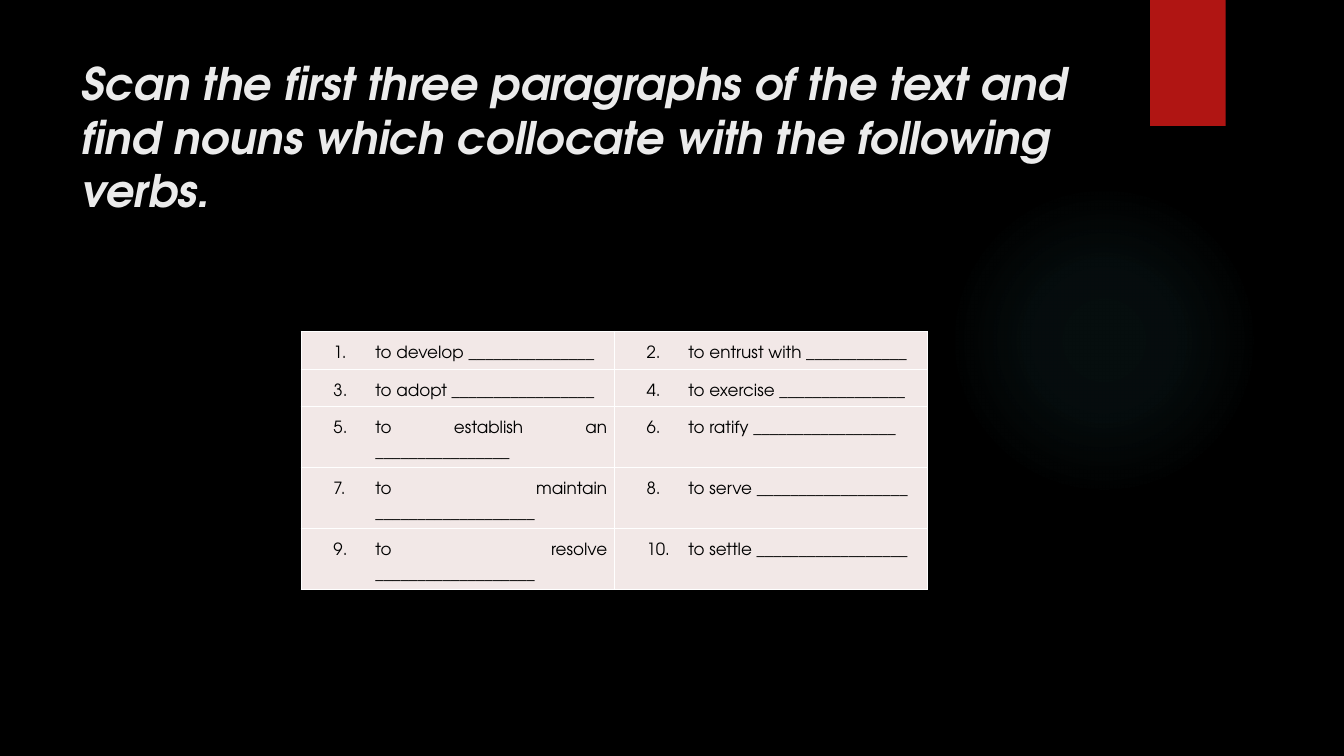
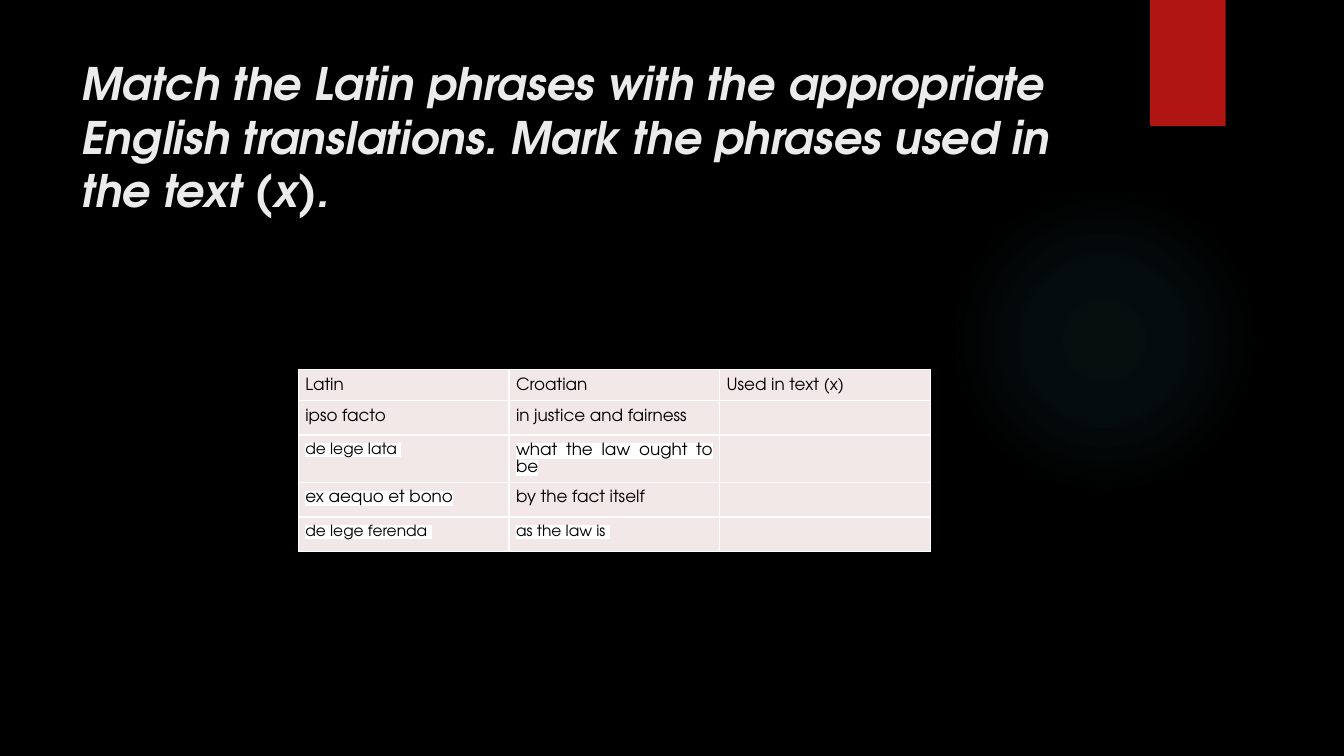
from lxml.etree import SubElement
from pptx import Presentation
from pptx.dml.color import RGBColor
from pptx.enum.shapes import MSO_SHAPE
from pptx.enum.text import MSO_ANCHOR, MSO_AUTO_SIZE, PP_ALIGN
from pptx.oxml import parse_xml
from pptx.oxml.ns import nsdecls, qn
from pptx.util import Pt

FONT = "TeX Gyre Adventor"
BACKGROUND, GLOW, BAND = "000000", "50B9C1", "B01513"
TITLE_COLOR, TEXT_COLOR, CELL_COLOR, WHITE = "EBEBEB", "000000", "F2E8E7", "FFFFFF"
GLOW_STOPS = ((0, 7), (36, 6), (69, 0))
CELL_INSET = 5

VERBS = (
    ("to develop _______________", "to entrust with ____________"),
    ("to adopt _________________", "to exercise _______________"),
    ("to establish an ________________", "to ratify _________________"),
    ("to maintain ___________________", "to serve __________________"),
    ("to resolve ___________________", "to settle __________________"),
)
PHRASES = (
    ("Latin", "Croatian", "Used in text (x)"),
    ("ipso facto", "in justice and fairness", ""),
    ("de lege lata ", "what the law ought to be", ""),
    ("ex aequo et bono", "by the fact itself", ""),
    ("de lege ferenda ", "as the law is ", ""),
)
SMALL_PHRASES = {"de lege lata ", "de lege ferenda ", "as the law is "}
HIGHLIGHTED_PHRASES = SMALL_PHRASES | {"what the law ought to be", "ex aequo et bono"}


def rgb(value):
    return RGBColor.from_string(value)


def write_text(paragraph, text, size=12, color=TEXT_COLOR, bold=False, italic=False,
               align=PP_ALIGN.LEFT, line_spacing=None, space_after=0, highlight=None):
    paragraph.alignment = align
    paragraph.line_spacing = line_spacing
    paragraph.space_after = Pt(space_after)
    if not text:
        SubElement(paragraph._p, qn("a:endParaRPr"), sz=str(size * 100))
        return
    run = paragraph.add_run()
    run.text = text
    font = run.font
    font.size, font.bold, font.italic = Pt(size), bold, italic
    font.color.rgb = rgb(color)
    if highlight:
        mark = SubElement(run._r.get_or_add_rPr(), qn("a:highlight"))
        SubElement(mark, qn("a:srgbClr"), val=highlight)
    font.name = FONT


def number_paragraph(paragraph, number):
    """Turn a paragraph into a hanging item of a numbered list."""
    properties = paragraph._p.get_or_add_pPr()
    properties.set("marL", str(Pt(48)))
    properties.set("indent", str(Pt(-30)))
    SubElement(properties, qn("a:buAutoNum"), type="arabicPeriod", startAt=str(number))


def add_plain_shape(slide, kind, left, top, width, height, color):
    shape = slide.shapes.add_shape(kind, Pt(left), Pt(top), Pt(width), Pt(height))
    shape.shadow.inherit = False
    shape.fill.solid()
    shape.fill.fore_color.rgb = rgb(color)
    shape.line.fill.background()
    return shape


def fade_fill(shape, color, stops):
    """Replace a solid fill by a radial one; stops are (position, opacity) in percent."""
    stop_list = "".join(
        f'<a:gs pos="{position * 1000}"><a:srgbClr val="{color}">'
        f'<a:alpha val="{opacity * 1000}"/></a:srgbClr></a:gs>'
        for position, opacity in stops)
    gradient = parse_xml(
        f'<a:gradFill {nsdecls("a")} rotWithShape="1"><a:gsLst>{stop_list}</a:gsLst>'
        '<a:path path="circle"><a:fillToRect l="50000" t="50000" r="50000" b="50000"/>'
        '</a:path></a:gradFill>')
    properties = shape.element.spPr
    properties.replace(properties.find(qn("a:solidFill")), gradient)


def add_shadow(shape):
    effects = shape.element.spPr.find(qn("a:effectLst"))
    shadow = SubElement(effects, qn("a:outerShdw"), blurRad=str(Pt(3)), dist=str(Pt(2)),
                        dir="5400000", rotWithShape="0")
    color = SubElement(shadow, qn("a:srgbClr"), val="000000")
    SubElement(color, qn("a:alpha"), val="45000")


def decorate_master(presentation, slide):
    """Build the glow and the band on a slide, then move them to the master."""
    master = presentation.slide_master
    master.background.fill.solid()
    master.background.fill.fore_color.rgb = rgb(BACKGROUND)
    glow = add_plain_shape(slide, MSO_SHAPE.OVAL, 677.5, 131.8, 221.8, 221.8, GLOW)
    fade_fill(glow, GLOW, GLOW_STOPS)
    band = add_plain_shape(slide, MSO_SHAPE.RECTANGLE, 821.5, 0, 54, 90, BAND)
    add_shadow(band)
    for offset, shape in enumerate((glow, band)):
        shape.element.nvSpPr.cNvPr.set("id", str(101 + offset))
        master.shapes.element.insert(2 + offset, shape.element)


def place_title(layout):
    title = next(iter(layout.placeholders))
    title.left, title.top, title.width, title.height = Pt(51.1), Pt(36), Pt(741), Pt(110)


def set_title(slide, text):
    frame = slide.shapes.title.text_frame
    frame.word_wrap = True
    frame.auto_size = MSO_AUTO_SIZE.NONE
    frame.vertical_anchor = MSO_ANCHOR.TOP
    write_text(frame.paragraphs[0], text, size=32, color=TITLE_COLOR, bold=True, italic=True)


def format_cell(cell):
    properties = cell._tc.get_or_add_tcPr()
    for side in ("lnL", "lnR", "lnT", "lnB"):
        border = SubElement(properties, qn(f"a:{side}"), w=str(Pt(1)))
        fill = SubElement(border, qn("a:solidFill"))
        SubElement(fill, qn("a:srgbClr"), val=WHITE)
    cell.fill.solid()
    cell.fill.fore_color.rgb = rgb(CELL_COLOR)
    cell.margin_left = cell.margin_right = Pt(CELL_INSET)
    cell.margin_top = cell.margin_bottom = Pt(CELL_INSET)


def add_grid(slide, left, top, column_width, row_heights, column_count):
    frame = slide.shapes.add_table(len(row_heights), column_count, Pt(left), Pt(top),
                                   Pt(column_width * column_count), Pt(sum(row_heights)))
    table = frame.table
    table.first_row = table.horz_banding = False
    for column in table.columns:
        column.width = Pt(column_width)
    for row, height in zip(table.rows, row_heights):
        row.height = Pt(height)
    for cell in table.iter_cells():
        format_cell(cell)
    return table


def fill_verbs(table):
    verbs = (verb for row in VERBS for verb in row)
    for number, (cell, verb) in enumerate(zip(table.iter_cells(), verbs), start=1):
        paragraph = cell.text_frame.paragraphs[0]
        number_paragraph(paragraph, number)
        write_text(paragraph, verb, align=PP_ALIGN.JUSTIFY, line_spacing=1.5, space_after=8)


def fill_phrases(table):
    phrases = (phrase for row in PHRASES for phrase in row)
    for cell, phrase in zip(table.iter_cells(), phrases):
        write_text(cell.text_frame.paragraphs[0], phrase,
                   size=11 if phrase in SMALL_PHRASES else 12,
                   highlight=WHITE if phrase in HIGHLIGHTED_PHRASES else None,
                   align=PP_ALIGN.JUSTIFY, line_spacing=1.07, space_after=8)


def main():
    presentation = Presentation()
    presentation.slide_width, presentation.slide_height = Pt(960), Pt(540)
    layout = presentation.slide_layouts.get_by_name("Title Only")
    place_title(layout)

    verb_slide = presentation.slides.add_slide(layout)
    decorate_master(presentation, verb_slide)
    set_title(verb_slide, "Scan the first three paragraphs of the text and find nouns "
                          "which collocate with the following verbs.")
    fill_verbs(add_grid(verb_slide, 215.2, 236.7, 223.6, (27, 26.5, 43.6, 43.6, 43.6), 2))

    phrase_slide = presentation.slides.add_slide(layout)
    set_title(phrase_slide, "Match the Latin phrases with the appropriate English "
                            "translations. Mark the phrases used in the text (x).")
    fill_phrases(add_grid(phrase_slide, 213.1, 264.2, 150.5, (21.8, 21.8, 33.8, 21.8, 21.8), 3))

    presentation.save("out.pptx")


if __name__ == "__main__":
    main()
